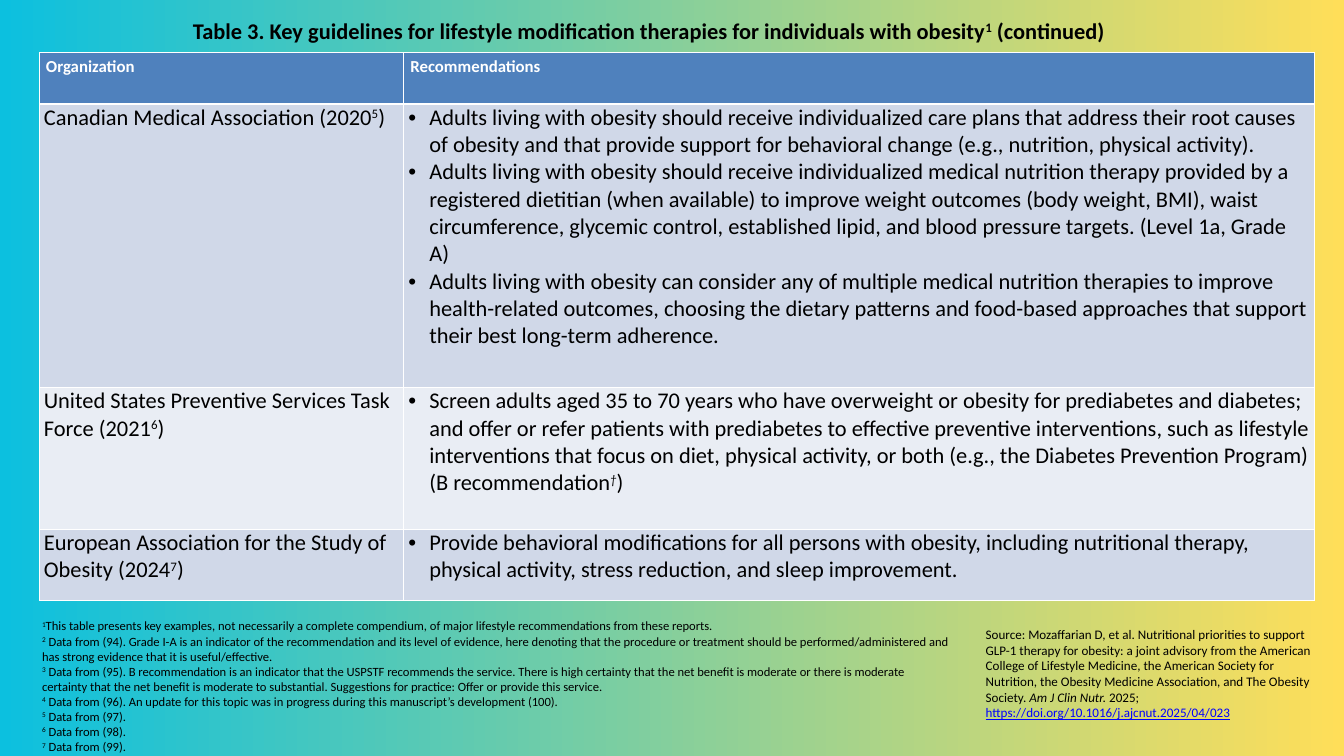
"""Build a slide with a table of lifestyle guidelines for obesity."""
from dataclasses import dataclass

from lxml.etree import SubElement
from pptx import Presentation
from pptx.dml.color import RGBColor
from pptx.enum.text import MSO_AUTO_SIZE, PP_ALIGN
from pptx.oxml.ns import qn
from pptx.util import Pt


@dataclass(frozen=True)
class Theme:
    font: str = "Calibri"
    ink: str = "000000"
    white: str = "FFFFFF"
    link: str = "0000FF"
    header: str = "4F81BD"
    bands: tuple = ("D0D8E8", "E9EDF4")
    backdrop: tuple = ("0CC0DF", "FFDE59")
    title: float = 24
    head: float = 18
    body: float = 24
    source: float = 14
    note: float = 13.5


THEME = Theme()
SUP = {"sup": True}
TITLE = [["Table 3. Key guidelines for lifestyle modification therapies for individuals with obesity",
          ("1", SUP), " (continued)"]]
HEADERS = ["Organization", "Recommendations"]
GUIDELINES = [
    (["Canadian Medical Association (2020", ("5", SUP), ")"], [
        ["Adults living with obesity should receive individualized care plans that address their root "
         "causes of obesity and that provide support for behavioral change (e.g., nutrition, physical "
         "activity)."],
        ["Adults living with obesity should receive individualized medical nutrition therapy provided by "
         "a registered dietitian (when available) to improve weight outcomes (body weight, BMI), waist "
         "circumference, glycemic control, established lipid, and blood pressure targets. (Level 1a, "
         "Grade A)"],
        ["Adults living with obesity can consider any of multiple medical nutrition therapies to improve "
         "health-related outcomes, choosing the dietary patterns and food-based approaches that support "
         "their best long-term adherence."]]),
    (["United States Preventive Services Task Force (2021", ("6", SUP), ")"], [
        ["Screen adults aged 35 to 70 years who have overweight or obesity for prediabetes and diabetes; "
         "and offer or refer patients with prediabetes to effective preventive interventions, such as "
         "lifestyle interventions that focus on diet, physical activity, or both (e.g., the Diabetes "
         "Prevention Program) (B recommendation", ("†", {"sup": True, "italic": True}), ")"]]),
    (["European Association for the Study of Obesity (2024", ("7", SUP), ")"], [
        ["Provide behavioral modifications for all persons with obesity, including nutritional therapy, "
         "physical activity, stress reduction, and sleep improvement."]]),
]
SOURCE = [["Source: Mozaffarian D, et al. Nutritional priorities to support GLP-1 therapy for obesity: a "
           "joint advisory from the American College of Lifestyle Medicine, the American Society for "
           "Nutrition, the Obesity Medicine Association, and The Obesity Society. ",
           ("Am J Clin Nutr. ", {"italic": True}), "2025; ",
           ("https://doi.org/10.1016/j.ajcnut.2025/04/023", {"color": THEME.link, "underline": True})]]
NOTES = [
    "This table presents key examples, not necessarily a complete compendium, of major lifestyle "
    "recommendations from these reports.",
    " Data from (94). Grade I-A is an indicator of the recommendation and its level of evidence, here "
    "denoting that the procedure or treatment should be performed/administered and has strong evidence "
    "that it is useful/effective.",
    " Data from (95). B recommendation is an indicator that the USPSTF recommends the service. There is "
    "high certainty that the net benefit is moderate or there is moderate certainty that the net benefit "
    "is moderate to substantial. Suggestions for practice: Offer or provide this service.",
    " Data from (96). An update for this topic was in progress during this manuscript’s development (100).",
    *(f" Data from ({n})." for n in (97, 98, 99)),
]


class SlideBuilder:
    """Hold the theme and the current slide, and add elements to it."""

    def __init__(self, s, theme):
        self.s, self.theme = s, theme

    def background(self):
        fill = self.s.background.fill
        fill.gradient()
        fill.gradient_angle = 0
        for stop, color in zip(fill.gradient_stops, self.theme.backdrop):
            stop.color.rgb = RGBColor.from_string(color)

    def fill_text(self, tf, paragraphs, bullet=False, align=PP_ALIGN.LEFT, **base):
        for i, parts in enumerate(paragraphs):
            p = tf.paragraphs[0] if i == 0 else tf.add_paragraph()
            p.alignment = align
            if bullet:
                self.bullet(p)
            for part in parts:
                text, extra = (part, {}) if isinstance(part, str) else part
                self.run(p, text, {"color": self.theme.ink, "bold": False, **base, **extra})

    def run(self, p, text, fmt):
        r = p.add_run()
        r.text = text
        r.font.name = self.theme.font
        r.font.color.rgb = RGBColor.from_string(fmt.pop("color"))
        if fmt.pop("sup", False):
            r._r.get_or_add_rPr().set("baseline", "30000")
        for name, value in fmt.items():
            setattr(r.font, name, value)

    def bullet(self, p):
        pPr = p._p.get_or_add_pPr()
        pPr.set("marL", str(Pt(22.5)))
        pPr.set("indent", str(-Pt(22.5)))
        SubElement(pPr, qn("a:buFont"), typeface="Arial")
        SubElement(pPr, qn("a:buChar"), char="•")

    def text(self, box, paragraphs, **fmt):
        sp = self.s.shapes.add_textbox(*map(Pt, box))
        tf = sp.text_frame
        tf.word_wrap = True
        tf.auto_size = MSO_AUTO_SIZE.SHAPE_TO_FIT_TEXT
        self.fill_text(tf, paragraphs, **fmt)

    def cell(self, cell, paragraphs, fill, borders, margins=None, **fmt):
        for name, value in (margins or {}).items():
            setattr(cell, name, value)
        self.fill_text(cell.text_frame, paragraphs, **fmt)
        tcPr = cell._tc.get_or_add_tcPr()
        for side, width in zip("LRTB", borders):
            ln = SubElement(tcPr, qn(f"a:ln{side}"), w=str(Pt(width)))
            SubElement(SubElement(ln, qn("a:solidFill")), qn("a:srgbClr"), val=self.theme.white)
        cell.fill.solid()
        cell.fill.fore_color.rgb = RGBColor.from_string(fill)

    def table(self, left, top, widths, heights, headers, rows):
        th = self.theme
        table = self.s.shapes.add_table(len(heights), len(widths), Pt(left), Pt(top),
                                        Pt(sum(widths)), Pt(sum(heights))).table
        for col, width in zip(table.columns, widths):
            col.width = Pt(width)
        for row, height in zip(table.rows, heights):
            row.height = Pt(height)
        for j, header in enumerate(headers):
            self.cell(table.cell(0, j), [[header]], th.header, (1, 1, 1, 3),
                      size=Pt(th.head), color=th.white, bold=True)
        margins = {"margin_left": Pt(5), "margin_right": Pt(5), "margin_top": 0, "margin_bottom": 0}
        for i, (name, advice) in enumerate(rows, 1):
            fill = th.bands[(i - 1) % 2]
            borders = (1, 1, 3 if i == 1 else 1, 1)
            for j, paragraphs in enumerate(([name], advice)):
                self.cell(table.cell(i, j), paragraphs, fill, borders, margins,
                          bullet=j == 1, size=Pt(th.body))


def main():
    prs = Presentation()
    prs.slide_width, prs.slide_height = Pt(1440), Pt(810)
    b = SlideBuilder(prs.slides.add_slide(prs.slide_layouts[6]), THEME)
    b.background()
    b.table(42, 56.5, (390.5, 975.5), (54.7, 304, 152, 76.3), HEADERS, GUIDELINES)
    b.text((38, 15, 1314, 65.5), TITLE, align=PP_ALIGN.CENTER, size=Pt(THEME.title), bold=True)
    b.text((1049, 667.5, 378, 108.5), SOURCE, size=Pt(THEME.source))
    notes = [[(str(n), SUP), note] for n, note in enumerate(NOTES, 1)]
    b.text((38, 659, 988, 160), notes, size=Pt(THEME.note))
    prs.save("out.pptx")


if __name__ == "__main__":
    main()
